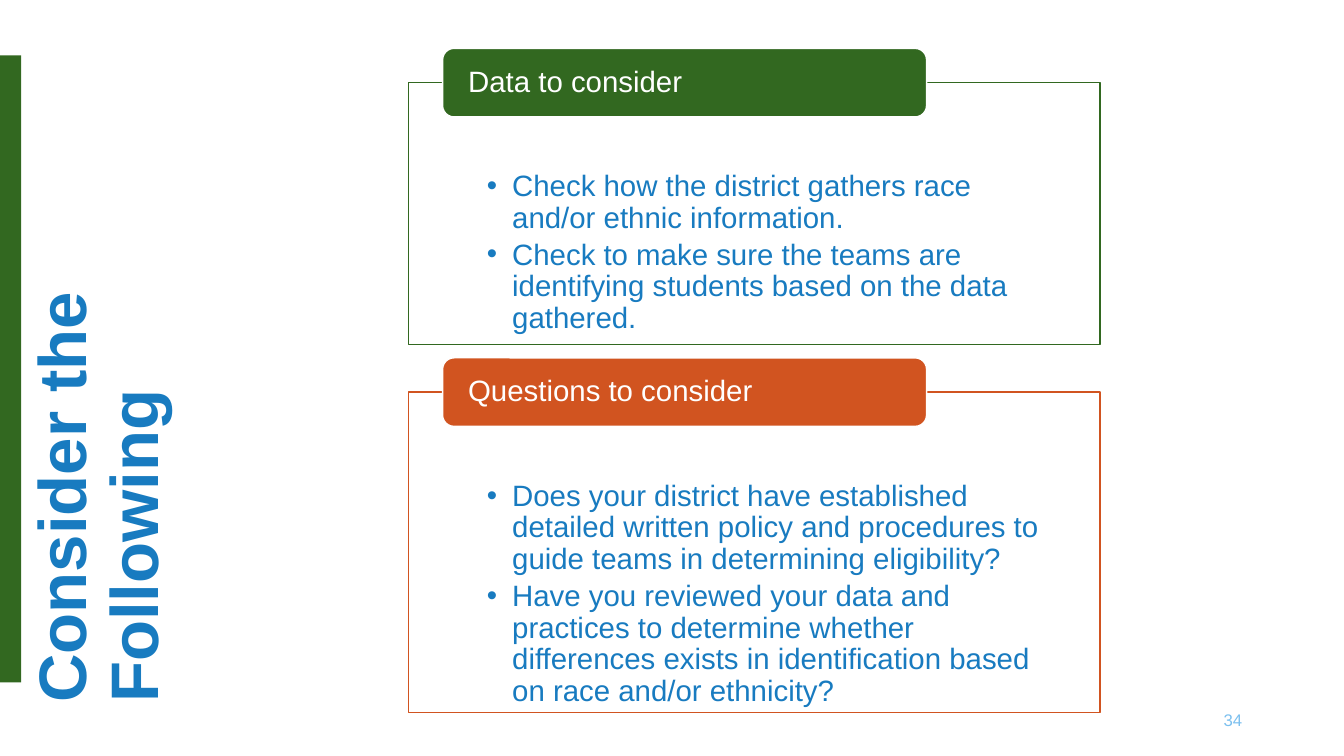
from lxml.etree import SubElement
from pptx import Presentation
from pptx.dml.color import RGBColor
from pptx.enum.shapes import MSO_SHAPE
from pptx.enum.text import MSO_ANCHOR, PP_ALIGN
from pptx.oxml.ns import qn
from pptx.util import Inches, Pt

GREEN = RGBColor(0x32, 0x68, 0x20)
ORANGE = RGBColor(0xD1, 0x54, 0x20)
BLUE = RGBColor(0x18, 0x7B, 0xC0)
PALE = RGBColor(0x7C, 0xC0, 0xEF)
WHITE = RGBColor(0xFF, 0xFF, 0xFF)

PANELS = [
    (0.48, 2.6, GREEN, "Data to consider", [
        "Check how the district gathers race and/or ethnic information.",
        "Check to make sure the teams are identifying students based on the data gathered.",
    ]),
    (3.55, 3.18, ORANGE, "Questions to consider", [
        "Does your district have established detailed written policy and procedures "
        "to guide teams in determining eligibility?",
        "Have you reviewed your data and practices to determine whether differences "
        "exists in identification based on race and/or ethnicity?",
    ]),
]


class Deck:
    font = "Arial"
    size = 21
    spacing = 0.9

    def __init__(self):
        self.prs = Presentation()
        self.prs.slide_width = Inches(13.33)
        self.prs.slide_height = Inches(7.5)
        self.slide = self.prs.slides.add_slide(self.prs.slide_layouts[6])

    def shape(self, kind, box, fill, line=None):
        item = self.slide.shapes.add_shape(kind, *map(Inches, box))
        item.shadow.inherit = False
        item.fill.solid()
        item.fill.fore_color.rgb = fill
        if line is None:
            item.line.fill.background()
        else:
            item.line.color.rgb = line
            item.line.width = Pt(1)
        return item

    def text(self, item, lines, color, size=size, bold=False,
             align=PP_ALIGN.LEFT, anchor=MSO_ANCHOR.TOP, inset=None, bullet=False):
        """Fill a shape with text; inset is left, top, right, bottom."""
        frame = item.text_frame
        frame.text = "\n".join(lines)
        frame.word_wrap = True
        frame.vertical_anchor = anchor
        if inset:
            (frame.margin_left, frame.margin_top,
             frame.margin_right, frame.margin_bottom) = map(Inches, inset)
        for para in frame.paragraphs:
            if bullet:
                self.bullet(para)
            para.alignment = align
            para.line_spacing = self.spacing
            for run in para.runs:
                run.font.name = self.font
                run.font.size = Pt(size)
                run.font.bold = bold
                run.font.color.rgb = color

    def bullet(self, para):
        props = para._p.get_or_add_pPr()
        props.set("marL", str(Inches(0.5)))
        props.set("indent", str(Inches(-0.25)))
        SubElement(props, qn("a:buFont"), typeface=self.font)
        SubElement(props, qn("a:buChar"), char="•")
        para.space_after = Pt(3.5)

    def label(self, text, box, turn=0, **style):
        item = self.slide.shapes.add_textbox(*map(Inches, box))
        item.rotation = turn
        self.text(item, [text], **style)

    def panel(self, top, height, color, head, points):
        """Draw an outlined list with a tab across its top edge."""
        body = self.shape(MSO_SHAPE.RECTANGLE, (4.05, top + 0.34, 6.86, height),
                          WHITE, color)
        self.text(body, points, BLUE, inset=(0.53, 0.88, 0.53, 0.16), bullet=True)
        tab = self.shape(MSO_SHAPE.ROUNDED_RECTANGLE, (4.39, top, 4.8, 0.68),
                         color, WHITE)
        self.text(tab, [head], WHITE, anchor=MSO_ANCHOR.MIDDLE,
                  inset=(0.22, 0, 0.22, 0))


def main():
    deck = Deck()
    deck.shape(MSO_SHAPE.RECTANGLE, (0, 0.55, 0.21, 6.22), GREEN)
    deck.label("34", (9.42, 6.95, 3, 0.4), color=PALE, size=12,
               align=PP_ALIGN.RIGHT, anchor=MSO_ANCHOR.MIDDLE)
    deck.label("Consider the Following", (-1.14, 2.41, 6.03, 3.29), turn=270,
               color=BLUE, size=48, bold=True)
    for panel in PANELS:
        deck.panel(*panel)
    deck.prs.save("out.pptx")


if __name__ == "__main__":
    main()
